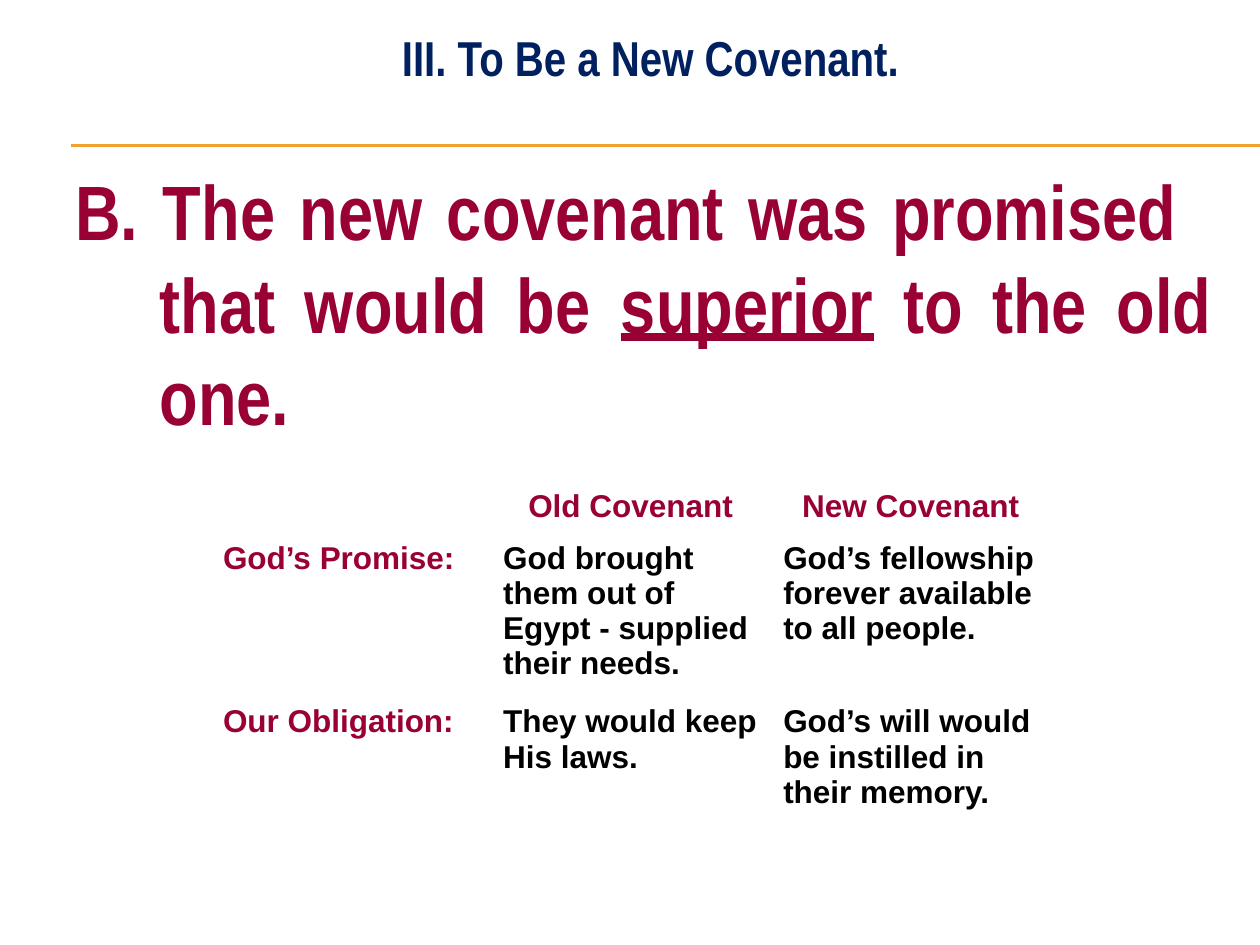
from lxml.etree import SubElement
from pptx import Presentation
from pptx.dml.color import RGBColor
from pptx.enum.shapes import MSO_CONNECTOR
from pptx.enum.text import PP_ALIGN
from pptx.oxml.ns import qn
from pptx.util import Inches, Pt

COLORS = {"gold": "F0A22E", "navy": "002060", "crimson": "990033", "black": "000000"}


class CovenantSlide:
    """Holds the text styles and the slide being built."""

    styles = {
        "title": {"name": "Arial Narrow", "size": Pt(28), "bold": True},
        "point": {"name": "Arial Narrow", "size": Pt(44), "bold": True},
        "cell": {"name": "Arial", "size": Pt(18), "bold": True},
    }

    def __init__(self, presentation):
        self.slide = presentation.slides.add_slide(presentation.slide_layouts[6])

    def add_runs(self, paragraph, runs, style, color):
        for text, underline in runs:
            run = paragraph.add_run()
            run.text = text
            for name, value in self.styles[style].items():
                setattr(run.font, name, value)
            run.font.color.rgb = RGBColor.from_string(COLORS[color])
            if underline:
                run.font.underline = True

    def rule(self, y):
        connector = self.slide.shapes.add_connector(
            MSO_CONNECTOR.STRAIGHT, Inches(0.56), Inches(y), Inches(10), Inches(y))
        connector.line.color.rgb = RGBColor.from_string(COLORS["gold"])
        connector.line.width = Pt(0.75)
        SubElement(connector._element.spPr, qn("a:effectLst"))

    def text(self, box, runs, style, color, alignment, hanging=0):
        shape = self.slide.shapes.add_textbox(*(Inches(length) for length in box))
        shape.text_frame.word_wrap = True
        paragraph = shape.text_frame.paragraphs[0]
        paragraph.alignment = alignment
        if hanging:
            properties = paragraph._p.get_or_add_pPr()
            properties.set("marL", str(Inches(hanging)))
            properties.set("indent", str(-Inches(hanging)))
        self.add_runs(paragraph, runs, style, color)

    def table(self, box, row_heights, rows):
        table = self.slide.shapes.add_table(
            len(rows), len(rows[0]), *(Inches(length) for length in box)).table
        table.first_row = table.horz_banding = False
        for row, height in zip(table.rows, row_heights):
            row.height = Inches(height)
        for row_index, texts in enumerate(rows):
            for column_index, text in enumerate(texts):
                cell = table.cell(row_index, column_index)
                cell.fill.background()
                if not text:
                    continue
                # Headings run along the top row and the first column
                heading = row_index == 0 or column_index == 0
                paragraph = cell.text_frame.paragraphs[0]
                paragraph.alignment = PP_ALIGN.LEFT if row_index else PP_ALIGN.CENTER
                self.add_runs(paragraph, [(text, False)], "cell",
                              "crimson" if heading else "black")


def main():
    presentation = Presentation()
    presentation.slide_width = Inches(10)
    presentation.slide_height = Inches(7.5)
    covenant = CovenantSlide(presentation)

    # Double rule under the title
    for y in (1.15, 1.16):
        covenant.rule(y)

    # Main point with a hanging indent
    covenant.text(
        (0.5, 1.25, 9.2, 2.4),
        [("B. The new covenant was promised \tthat would be ", False),
         ("superior", True),
         (" to the old \tone.", False)],
        "point", "crimson", PP_ALIGN.JUSTIFY, hanging=0.67)

    # Title
    covenant.text((0.87, 0.17, 8.58, 0.57), [("III. To Be a New Covenant.", False)],
                  "title", "navy", PP_ALIGN.CENTER)

    # Comparison of the covenants
    covenant.table(
        (1.67, 3.83, 6.67, 2.71), (0.41, 1.3, 1),
        [("", "Old Covenant", "New Covenant"),
         ("God’s Promise:",
          "God brought them out of Egypt - supplied their needs.",
          "God’s fellowship forever available to all people."),
         ("Our Obligation:",
          "They would keep His laws.",
          "God’s will would be instilled in their memory.")])

    presentation.save("out.pptx")


if __name__ == "__main__":
    main()
